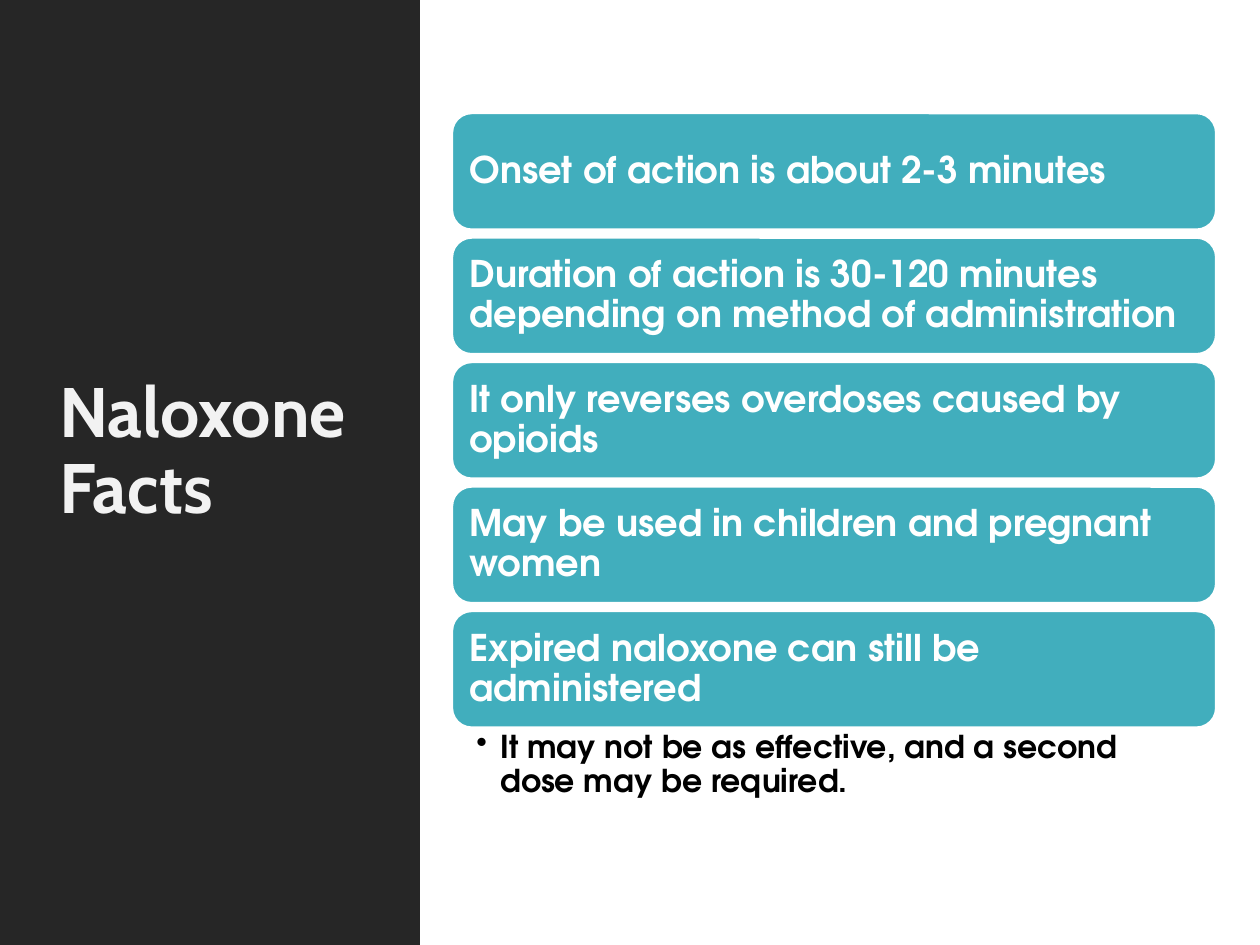
from lxml import etree
from pptx import Presentation
from pptx.dml.color import RGBColor
from pptx.enum.shapes import MSO_SHAPE
from pptx.enum.text import MSO_ANCHOR, PP_ALIGN
from pptx.oxml.ns import qn
from pptx.util import Inches, Pt

RECTANGLE, ROUNDED = MSO_SHAPE.RECTANGLE, MSO_SHAPE.ROUNDED_RECTANGLE
TOP, MIDDLE = MSO_ANCHOR.TOP, MSO_ANCHOR.MIDDLE
LEFT = PP_ALIGN.LEFT

SLIDE_W, SLIDE_H = 10, 7.5
SIDEBAR_W = SLIDE_W / 3
CARD_H, CARD_PITCH = 0.92, 0.988

TITLE_FONT = {"name": "Cabin", "size": Pt(40), "bold": True}
FACT_FONT = {"name": "TeX Gyre Adventor", "size": Pt(21), "bold": True}
NOTE_FONT = {**FACT_FONT, "size": Pt(18)}

FACTS = [
    "Onset of action is about 2-3 minutes",
    "Duration of action is 30-120 minutes depending on method of administration",
    "It only reverses overdoses caused by opioids",
    "May be used in children and pregnant women",
    "Expired naloxone can still be administered",
]
NOTE = "It may not be as effective, and a second dose may be required."


def color(hex_code):
    return RGBColor.from_string(hex_code)


def add_panel(slide, preset, box, fill, outline=None):
    panel = slide.shapes.add_shape(preset, *map(Inches, box))
    panel.shadow.inherit = False
    panel.fill.solid()
    panel.fill.fore_color.rgb = color(fill)
    if outline:
        panel.line.color.rgb = color(outline)
        panel.line.width = Pt(1)
    else:
        panel.line.fill.background()
    return panel


def write(holder, text, font, ink, anchor, insets):
    """Fill a shape with one left-aligned paragraph; insets run left, top, right, bottom."""
    frame = holder.text_frame
    frame.word_wrap = True
    frame.vertical_anchor = anchor
    for side, inset in zip(("left", "top", "right", "bottom"), insets):
        setattr(frame, f"margin_{side}", Inches(inset))
    paragraph = frame.paragraphs[0]
    paragraph.alignment = LEFT
    paragraph.line_spacing = 0.9
    run = paragraph.add_run()
    run.text = text
    for attribute, value in font.items():
        setattr(run.font, attribute, value)
    run.font.color.rgb = color(ink)
    return paragraph


def add_bullet(paragraph, indent):
    properties = paragraph._p.get_or_add_pPr()
    properties.set("marL", str(Inches(indent)))
    properties.set("indent", str(-Inches(indent)))
    etree.SubElement(properties, qn("a:buChar")).set("char", "•")


def add_sidebar(slide, box):
    left, top, width, height = box
    add_panel(slide, RECTANGLE, box, "262626")
    title_left, title_top = left + 0.37, top + 0.63
    title = slide.shapes.add_textbox(
        *map(Inches, (title_left, title_top, left + width - title_left, 0.79 * height)))
    write(title, "Naloxone Facts", TITLE_FONT, "F2F2F2", MIDDLE, (0.1, 0.05, 0.1, 0.05))


def add_facts(slide, box):
    """Stack the fact cards from the top of the box and put the note in what is left."""
    left, top, width, height = box
    for row, fact in enumerate(FACTS):
        card_box = (left, top + row * CARD_PITCH, width, CARD_H)
        card = add_panel(slide, ROUNDED, card_box, "41AEBD", "FFFFFF")
        write(card, fact, FACT_FONT, "FFFFFF", MIDDLE, (0.09,) * 4)
    note_offset = (len(FACTS) - 1) * CARD_PITCH + CARD_H
    note = slide.shapes.add_textbox(
        *map(Inches, (left, top + note_offset, width, height - note_offset)))
    paragraph = write(note, NOTE, NOTE_FONT, "000000", TOP, (0.19, 0.03, 0.14, 0.03))
    add_bullet(paragraph, 0.19)


def main():
    deck = Presentation()
    deck.slide_width, deck.slide_height = Inches(SLIDE_W), Inches(SLIDE_H)
    slide = deck.slides.add_slide(deck.slide_layouts[6])
    add_sidebar(slide, (0, 0, SIDEBAR_W, SLIDE_H))
    add_facts(slide, (3.59, 0.9, 6.06, 5.97))
    deck.save("out.pptx")


if __name__ == "__main__":
    main()
